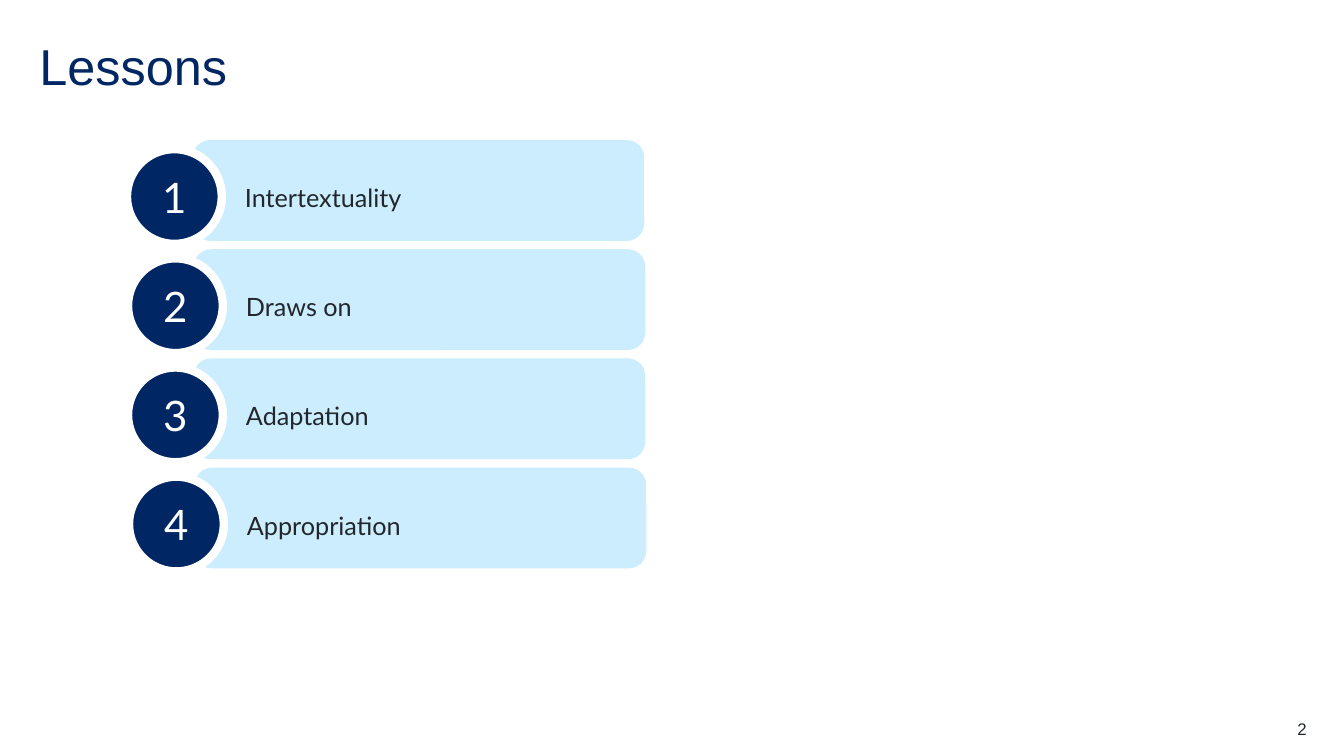
from pptx import Presentation
from pptx.dml.color import RGBColor
from pptx.enum import shapes, text
from pptx.util import Inches, Pt

NAVY = RGBColor(0x00, 0x26, 0x64)
PALE_BLUE = RGBColor(0xCB, 0xED, 0xFD)
INK = RGBColor(0x22, 0x27, 0x2B)
WHITE = RGBColor(0xFF, 0xFF, 0xFF)

LESSONS = ["Intertextuality", "Draws on", "Adaptation", "Appropriation"]
LESSON_LEFTS = [1.26, 1.27, 1.27, 1.28]
FIRST_TOP = 1.39
LESSON_PITCH = 1.083


def write(holder, words, *, size, color, font="Arial", align=text.PP_ALIGN.LEFT,
          anchor=text.MSO_ANCHOR.TOP, spacing=None, inset=0):
    frame = holder.text_frame
    frame.word_wrap = True
    frame.vertical_anchor = anchor
    frame.margin_left = frame.margin_right = Inches(inset)
    frame.margin_top = frame.margin_bottom = Inches(inset / 2)
    paragraph = frame.paragraphs[0]
    paragraph.alignment = align
    paragraph.line_spacing = spacing
    run = paragraph.add_run()
    run.text = words
    run.font.size = Pt(size)
    run.font.name = font
    run.font.color.rgb = color


def add_block(slide, kind, left, top, width, height, fill, outline=None):
    block = slide.shapes.add_shape(
        kind, Inches(left), Inches(top), Inches(width), Inches(height))
    block.shadow.inherit = False
    block.fill.solid()
    block.fill.fore_color.rgb = fill
    if outline is None:
        block.line.fill.background()
    else:
        block.line.color.rgb = outline
        block.line.width = Pt(6)
    return block


def add_title(slide, words):
    title = slide.shapes.title
    title.left, title.top = Inches(0.39), Inches(0.39)
    title.width, title.height = Inches(12.56), Inches(0.6)
    write(title, words, size=36, color=NAVY, spacing=0.9,
          anchor=text.MSO_ANCHOR.MIDDLE)


def add_page_number(slide, number):
    page_number = slide.shapes.add_textbox(
        Inches(12.17), Inches(7.13), Inches(0.79), Inches(0.2))
    write(page_number, number, size=12, color=INK, align=text.PP_ALIGN.RIGHT)


def add_lesson(slide, number, name, left, top):
    kinds = shapes.MSO_SHAPE
    bar = add_block(slide, kinds.ROUNDED_RECTANGLE, left + 0.65, top, 4.48, 1, PALE_BLUE)
    bar.adjustments[0] = 0.173

    badge = add_block(slide, kinds.OVAL, left, top + 0.09, 0.94, 0.94, NAVY, WHITE)
    write(badge, str(number), size=30, color=WHITE, font="Lato", inset=0.1,
          align=text.PP_ALIGN.CENTER, anchor=text.MSO_ANCHOR.MIDDLE)

    label = add_block(slide, kinds.RECTANGLE, left + 1.17, top + 0.27, 3.63, 0.4, PALE_BLUE)
    write(label, name, size=18, color=INK, font="Lato", spacing=1.5)
    label.text_frame.auto_size = text.MSO_AUTO_SIZE.SHAPE_TO_FIT_TEXT


def main():
    deck = Presentation()
    deck.slide_width, deck.slide_height = Inches(13.33), Inches(7.5)
    slide = deck.slides.add_slide(deck.slide_layouts.get_by_name("Title Only"))

    add_page_number(slide, "2")
    add_title(slide, "Lessons")
    for index, (name, left) in enumerate(zip(LESSONS, LESSON_LEFTS)):
        add_lesson(slide, index + 1, name, left, FIRST_TOP + index * LESSON_PITCH)

    deck.save("out.pptx")


if __name__ == "__main__":
    main()
